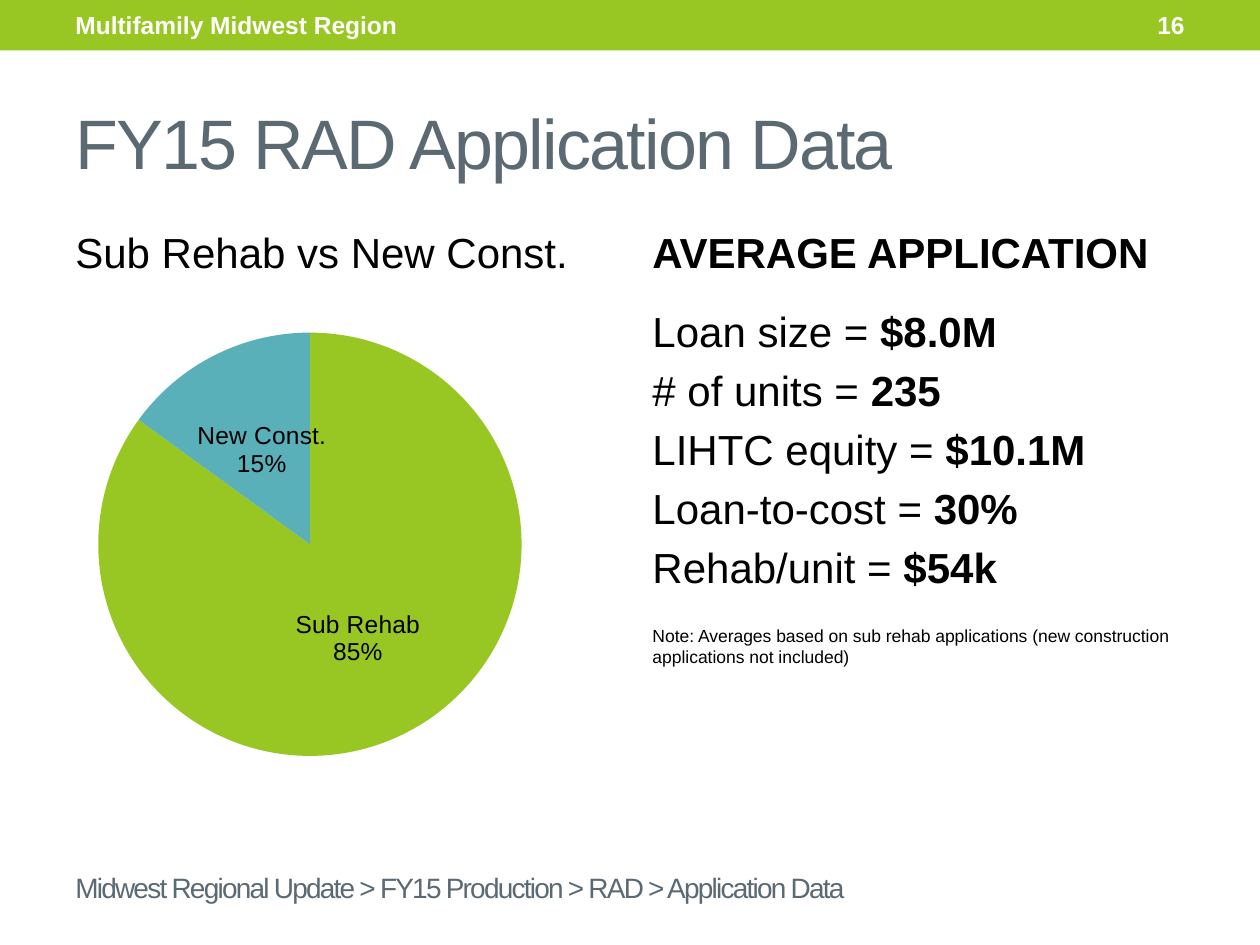
from lxml import etree
from pptx import Presentation
from pptx.chart.data import CategoryChartData
from pptx.dml.color import RGBColor
from pptx.enum.chart import XL_CHART_TYPE as ChartType, XL_LABEL_POSITION as LabelPosition
from pptx.enum.shapes import MSO_SHAPE as ShapeType
from pptx.enum.text import MSO_ANCHOR as Anchor, PP_ALIGN as Align
from pptx.oxml import parse_xml
from pptx.oxml.ns import nsdecls, qn
from pptx.util import Inches, Pt

GREEN = RGBColor(0x98, 0xC7, 0x23)
TEAL = RGBColor(0x59, 0xB0, 0xB9)
SLATE = RGBColor(0x5B, 0x69, 0x73)
WHITE = RGBColor(0xFF, 0xFF, 0xFF)
BLACK = RGBColor(0x00, 0x00, 0x00)


def add_runs(paragraph, runs, size, color, spacing=0):
    for text, bold in runs:
        run = paragraph.add_run()
        run.text = text
        formats = {"name": "Arial", "size": Pt(size), "bold": bold}
        for name, value in formats.items():
            setattr(run.font, name, value)
        run.font.color.rgb = color
        if spacing:
            run.font._element.set("spc", str(spacing))


def add_text_frame(box, anchor):
    text_frame = slide.shapes.add_textbox(*map(Inches, box)).text_frame
    text_frame.word_wrap = True
    text_frame.vertical_anchor = anchor
    return text_frame


presentation = Presentation()
presentation.slide_width = Inches(10)
presentation.slide_height = Inches(7.5)
slide = presentation.slides.add_slide(presentation.slide_layouts[6])

banner = slide.shapes.add_shape(ShapeType.RECTANGLE, 0, 0, Inches(10), Inches(0.4))
banner.shadow.inherit = False
banner.fill.solid()
banner.fill.fore_color.rgb = GREEN
banner.line.fill.background()

labels = [
    ("Multifamily Midwest Region", (0.5, 0.02, 4.5, 0.36), 14, WHITE, True, Align.LEFT, 0),
    ("16", (8.33, 0.02, 1.17, 0.36), 14, WHITE, True, Align.RIGHT, 0),
    ("FY15 RAD Application Data", (0.5, 0.58, 9, 1.08), 40, SLATE, False, Align.LEFT, -100),
    ("Midwest Regional Update > FY15 Production > RAD > Application Data",
     (0.5, 6.83, 9, 0.42), 16, SLATE, False, Align.LEFT, -100),
]
for text, box, size, color, bold, alignment, spacing in labels:
    paragraph = add_text_frame(box, Anchor.MIDDLE).paragraphs[0]
    paragraph.alignment = alignment
    add_runs(paragraph, [(text, bold)], size, color, spacing)

columns = [
    ((0.5, 1.75, 4.25, 0.6), [([("Sub Rehab vs New Const.", False)], 24, 5)]),
    ((5.08, 1.75, 4.75, 5.58), [
        ([("AVERAGE APPLICATION", True)], 24, 5),
        ([("Loan size = ", False), ("$8.0M", True)], 24, 16.5),
        ([("# of units = ", False), ("235", True)], 24, 4.8),
        ([("LIHTC equity = ", False), ("$10.1M", True)], 24, 4.8),
        ([("Loan-to-cost = ", False), ("30%", True)], 24, 4.8),
        ([("Rehab/unit = ", False), ("$54k", True)], 24, 4.8),
        ([("Note: Averages based on sub rehab applications "
           "(new construction applications not included)", False)], 10, 19),
    ]),
]
for box, lines in columns:
    text_frame = add_text_frame(box, Anchor.TOP)
    for index, (runs, size, space_before) in enumerate(lines):
        paragraph = text_frame.add_paragraph() if index else text_frame.paragraphs[0]
        paragraph.space_before = Pt(space_before)
        add_runs(paragraph, runs, size, BLACK)

chart_data = CategoryChartData()
chart_data.categories = ["Sub Rehab", "New Const."]
chart_data.add_series("Series 1", (85, 15))
chart = slide.shapes.add_chart(
    ChartType.PIE, Inches(0.17), Inches(1.92), Inches(4.58), Inches(4.8), chart_data
).chart
chart.has_legend = False
chart.has_title = False
chart.font.name = "Arial"
chart.font.size = Pt(18)
chart.font.color.rgb = BLACK

plot = chart.plots[0]
plot.vary_by_categories = True
for index, color in enumerate((GREEN, TEAL)):
    point = plot.series[0].points[index]
    point.format.fill.solid()
    point.format.fill.fore_color.rgb = color

plot.has_data_labels = True
label_formats = {
    "show_category_name": True,
    "show_percentage": True,
    "show_value": False,
    "position": LabelPosition.CENTER,
}
for name, value in label_formats.items():
    setattr(plot.data_labels, name, value)
plot.data_labels.font.size = Pt(14)
plot.data_labels.font.name = "Arial"
plot.data_labels.font.color.rgb = BLACK
separator = parse_xml(f"<c:separator {nsdecls('c')}>\n</c:separator>")
plot.data_labels._element.find(qn("c:showBubbleSize")).addnext(separator)

plot_area = chart._chartSpace.chart.plotArea
for layout in plot_area.findall(qn("c:layout")):
    plot_area.remove(layout)
layout = parse_xml(f"<c:layout {nsdecls('c')}><c:manualLayout/></c:layout>")
layout_values = {
    "layoutTarget": "inner", "xMode": "edge", "yMode": "edge",
    "x": "0.13", "y": "0.15", "w": "0.74", "h": "0.7",
}
for name, value in layout_values.items():
    etree.SubElement(layout[0], qn(f"c:{name}")).set("val", value)
plot_area.insert(0, layout)

presentation.save("out.pptx")
